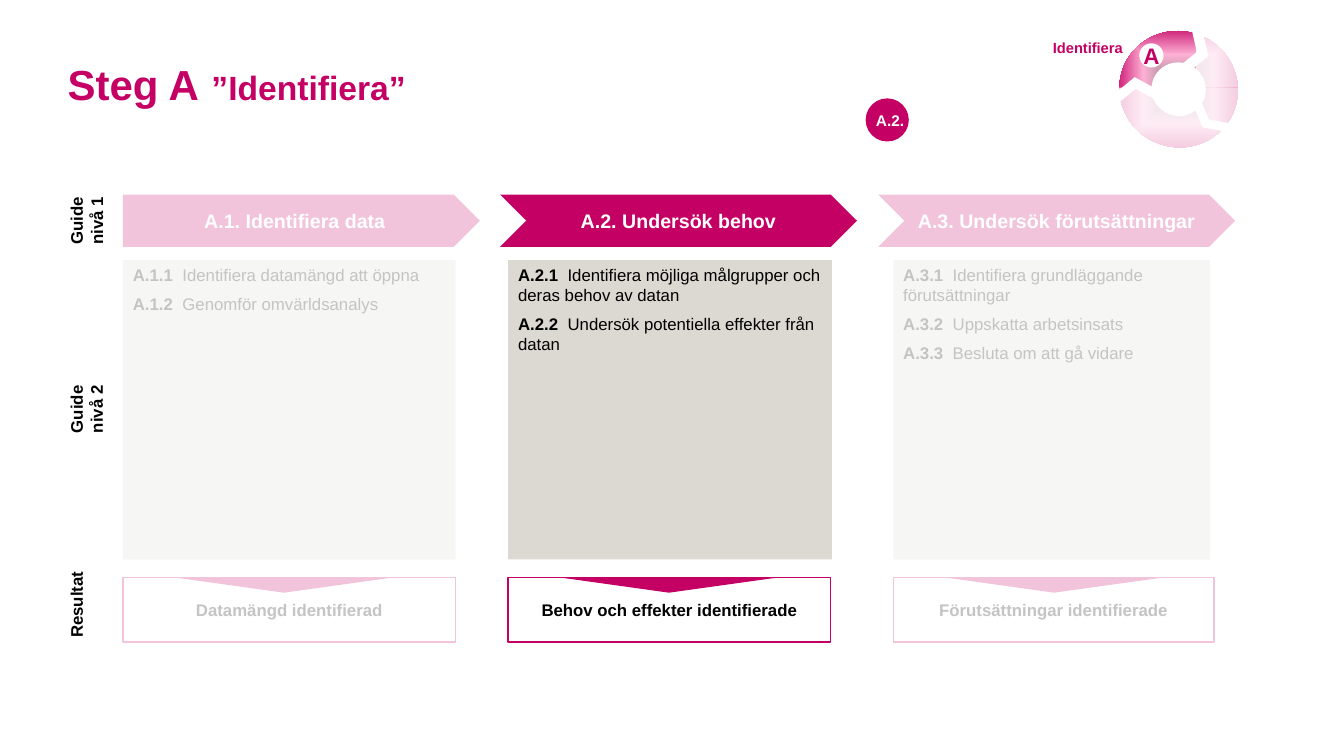
from dataclasses import dataclass

from lxml import etree
from pptx import Presentation
from pptx.dml.color import RGBColor
from pptx.enum.shapes import MSO_SHAPE
from pptx.enum.text import MSO_ANCHOR, MSO_AUTO_SIZE, PP_ALIGN
from pptx.oxml import parse_xml
from pptx.oxml.ns import nsdecls, qn
from pptx.util import Emu, Pt

PX = 9144  # EMU per px, 100 px to the inch


@dataclass(frozen=True)
class Theme:
    font: str = "Arial"
    accent: str = "C40064"
    panel: str = "DCD9D2"
    white: str = "FFFFFF"
    black: str = "000000"
    title: float = 30
    title_gap: float = 32
    subtitle: float = 24
    letter: float = 16
    arrow: float = 14
    body: float = 12
    badge: float = 11
    caption: float = 10.5


@dataclass(frozen=True)
class Box:
    x: int
    y: int
    w: int
    h: int
    rotation: float = 0


@dataclass(frozen=True)
class Step:
    title: str
    tasks: tuple[str, ...]
    result: str
    panel_w: int
    result_w: int


@dataclass(frozen=True)
class RowLabel:
    lines: tuple[str, ...]
    box: Box


T = Theme()

STEPS = (
    Step("Identifiera data",
         ("Identifiera datamängd att öppna", "Genomför omvärldsanalys"),
         "Datamängd identifierad", 330, 330),
    Step("Undersök behov",
         ("Identifiera möjliga målgrupper och deras behov av datan",
          "Undersök potentiella effekter från datan"),
         "Behov och effekter identifierade", 321, 320),
    Step("Undersök förutsättningar",
         ("Identifiera grundläggande förutsättningar", "Uppskatta arbetsinsats",
          "Besluta om att gå vidare"),
         "Förutsättningar identifierade", 314, 318),
)
ROW_LABELS = (
    RowLabel(("Guide nivå 1",), Box(47, 197, 81, 44, 270)),
    RowLabel(("Guide", "nivå 2"), Box(-61, 384, 297, 44, 270)),
    RowLabel(("Resultat",), Box(37, 578, 101, 44, 270)),
)
RING_GAPS = (
    Box(1115, 71, 23, 34, 264.7),
    Box(1175, 32, 24, 39, 18.7),
    Box(1189, 100, 20, 37, 128.4),
)
RING_VEILS = (Box(1092, 87, 154, 65), Box(1192, 30, 51, 63, 90))
STEP_VEILS = (Box(857, 172, 389, 479), Box(113, 172, 378, 479))
RING_STOPS = ((1, "808080"), (45, "FDB0D4"), (85, "C50366"))


def place(s, box: Box) -> None:
    s.left, s.top, s.width, s.height = (Emu(v * PX) for v in (box.x, box.y, box.w, box.h))
    s.rotation = box.rotation


def add_shape(shapes, kind: MSO_SHAPE, box: Box, fill: str | None = None,
              line: str | None = None, line_pt: float = 1):
    s = shapes.add_shape(kind, 0, 0, 0, 0)
    place(s, box)
    s.shadow.inherit = False
    if fill:
        s.fill.solid()
        s.fill.fore_color.rgb = RGBColor.from_string(fill)
    else:
        s.fill.background()
    if line:
        s.line.color.rgb = RGBColor.from_string(line)
        s.line.width = Pt(line_pt)
    else:
        s.line.fill.background()
    return s


def add_label(shapes, box: Box):
    s = shapes.add_textbox(0, 0, 0, 0)
    place(s, box)
    return s


def set_margins(tf, margin: int = 0) -> None:
    tf.margin_left = tf.margin_top = tf.margin_right = tf.margin_bottom = margin


def style(p, size: float, color: str, align=PP_ALIGN.CENTER, bold: bool | None = True) -> None:
    p.alignment = align
    p.font.name, p.font.size, p.font.bold = T.font, Pt(size), bold
    p.font.color.rgb = RGBColor.from_string(color)


def write(s, lines: tuple[str, ...], size: float, color: str,
          anchor=MSO_ANCHOR.MIDDLE, align=PP_ALIGN.CENTER) -> None:
    tf = s.text_frame
    tf.word_wrap = True
    tf.vertical_anchor = anchor
    tf.text = "\n".join(lines)
    for p in tf.paragraphs:
        style(p, size, color, align)


def add_veil(shapes, box: Box) -> None:
    """Fade what lies behind with translucent white."""
    s = add_shape(shapes, MSO_SHAPE.RECTANGLE, box, T.white)
    color = s._element.spPr.find(qn("a:solidFill"))[0]
    etree.SubElement(color, qn("a:alpha"), val="77000")


def add_title(s) -> None:
    place(s, Box(67, 50, 1042, 91))
    tf = s.text_frame
    tf.auto_size = MSO_AUTO_SIZE.NONE
    tf.vertical_anchor = MSO_ANCHOR.TOP
    set_margins(tf)
    p = tf.paragraphs[0]
    p.line_spacing = 1.1
    style(p, T.title, T.accent, PP_ALIGN.LEFT)
    for text, size in (("Steg A", T.title), (" ", T.title_gap), ("”Identifiera”", T.subtitle)):
        r = p.add_run()
        r.text = text
        r.font.size = Pt(size)


def add_tasks(s, number: int, tasks: tuple[str, ...]) -> None:
    tf = s.text_frame
    tf.word_wrap = True
    tf.vertical_anchor = MSO_ANCHOR.TOP
    for i, task in enumerate(tasks):
        p = tf.add_paragraph() if i else tf.paragraphs[0]
        if i:
            p.space_before = Pt(6)
        style(p, T.body, T.black, PP_ALIGN.LEFT, bold=None)
        for text, bold in ((f"A.{number}.{i + 1}  ", True), (task, False)):
            r = p.add_run()
            r.text, r.font.bold = text, bold


def add_step(shapes, i: int, step: Step) -> None:
    x = 122 + 382 * i
    panel = add_shape(shapes, MSO_SHAPE.RECTANGLE, Box(x, 258, step.panel_w, 297), T.panel)
    add_tasks(panel, i + 1, step.tasks)
    kind = MSO_SHAPE.CHEVRON if i else MSO_SHAPE.PENTAGON
    arrow = add_shape(shapes, kind, Box(122 + 749 * i // 2, 193, 354, 52), T.accent)
    write(arrow, (f"A.{i + 1}. {step.title}",), T.arrow, T.white)
    result = add_shape(shapes, MSO_SHAPE.RECTANGLE, Box(x, 573, step.result_w, 64), line=T.accent)
    write(result, (step.result,), T.body, T.black)
    add_shape(shapes, MSO_SHAPE.ISOSCELES_TRIANGLE, Box(x + 52, 573, 215, 15, 180), T.accent)


def add_ring(shapes) -> None:
    disc = add_shape(shapes, MSO_SHAPE.OVAL, Box(1110, 31, 118, 115, 22.7), T.accent)
    stops = "".join(f'<a:gs pos="{pos * 1000}"><a:srgbClr val="{color}"/></a:gs>'
                    for pos, color in RING_STOPS)
    spPr = disc._element.spPr
    spPr.replace(spPr.find(qn("a:solidFill")), parse_xml(
        f'<a:gradFill {nsdecls("a")} rotWithShape="1"><a:gsLst>{stops}</a:gsLst>'
        '<a:path path="shape"><a:fillToRect l="50000" t="50000" r="50000" b="50000"/>'
        '</a:path></a:gradFill>'))
    add_shape(shapes, MSO_SHAPE.OVAL, Box(1142, 62, 54, 53, 22.7), T.white)
    for gap in RING_GAPS:
        add_shape(shapes, MSO_SHAPE.CHEVRON, gap, T.white)
    letter = add_shape(shapes, MSO_SHAPE.OVAL, Box(1130, 43, 24, 24), T.white)
    set_margins(letter.text_frame)
    write(letter, ("A",), T.letter, T.accent)
    write(add_label(shapes, Box(1017, 19, 124, 56)), ("Identifiera",), T.caption, T.accent)
    for box in RING_VEILS:
        add_veil(shapes, box)


def main() -> None:
    prs = Presentation()
    prs.slide_width, prs.slide_height = Emu(1333 * PX), Emu(750 * PX)
    shapes = prs.slides.add_slide(prs.slide_layouts[5]).shapes
    add_title(shapes.title)
    for i, step in enumerate(STEPS):
        add_step(shapes, i, step)
    add_ring(shapes)
    for box in STEP_VEILS:
        add_veil(shapes, box)
    add_shape(shapes, MSO_SHAPE.OVAL, Box(860, 99, 40, 40), T.accent, T.accent, 2)
    badge = add_label(shapes, Box(859, 105, 60, 29))
    write(badge, ("A.2.",), T.badge, T.white, MSO_ANCHOR.TOP, PP_ALIGN.LEFT)
    for label in ROW_LABELS:
        s = add_label(shapes, label.box)
        set_margins(s.text_frame)
        write(s, label.lines, T.body, T.black, MSO_ANCHOR.TOP)
    prs.save("out.pptx")


if __name__ == "__main__":
    main()
